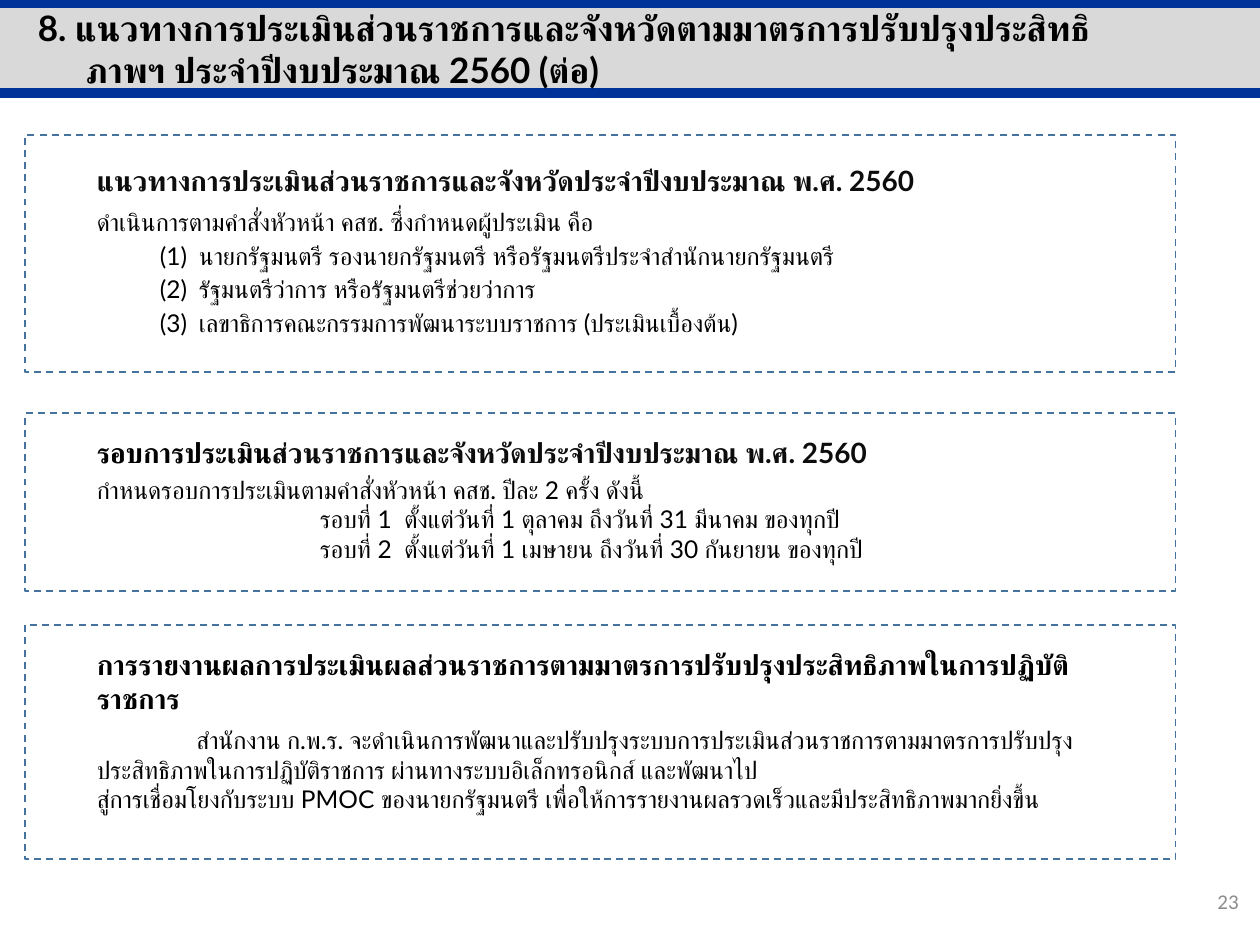
"""Build a slide on how government agencies are assessed in fiscal year 2560."""
from dataclasses import dataclass

from lxml import etree
from pptx import Presentation
from pptx import util as u
from pptx.dml.color import RGBColor
from pptx.enum import dml, shapes, text
from pptx.oxml.ns import qn

COLORS = {"band": "D9D9D9", "rule": "003399", "paper": "FFFFFF", "dash": "43739E",
          "black": "000000", "ink": "0D0D0D", "number": "8C8C8C"}
CARD_LEFT, CARD_WIDTH, TEXT_LEFT = 0.2, 9.13, 0.67


@dataclass(frozen=True)
class Line:
    text: str
    size: float = 14
    bold: bool = False
    color: str = "black"
    before: float = 0
    spacing: float = 1.0
    margin: float = 0
    indent: float = 0
    numbered: bool = False
    ink_tail: str = ""
    font: str = "Lato"
    align: text.PP_ALIGN = text.PP_ALIGN.LEFT


@dataclass(frozen=True)
class Card:
    top: float
    height: float
    text_top: float
    text_width: float
    text_height: float
    lines: tuple[Line, ...]


def heading(content: str, **options) -> Line:
    return Line(content, size=16, bold=True, before=6, **options)


def assessor(content: str) -> Line:
    return Line(content, spacing=1.15, margin=0.81, indent=-0.31, numbered=True)


TITLE = Line("8. แนวทางการประเมินส่วนราชการและจังหวัดตามมาตรการปรับปรุงประสิทธิภาพฯ "
             "ประจำปีงบประมาณ 2560 (ต่อ)", size=20, bold=True, margin=0.38, indent=-0.38)
PAGE_NUMBER = Line("23", size=12, color="number", font="Calibri", align=text.PP_ALIGN.RIGHT)
CARDS = (
    Card(4.96, 1.86, 5.09, 8.29, 2.22, (
        heading("การรายงานผลการประเมินผลส่วนราชการตามมาตรการปรับปรุงประสิทธิภาพในการปฏิบัติราชการ"),
        Line("สำนักงาน ก.พ.ร. จะดำเนินการพัฒนาและปรับปรุงระบบการประเมินส่วนราชการ"
             "ตามมาตรการปรับปรุงประสิทธิภาพในการปฏิบัติราชการ ผ่านทางระบบอิเล็กทรอนิกส์ และพัฒนาไป\n"
             "สู่การเชื่อมโยงกับระบบ PMOC ของนายกรัฐมนตรี "
             "เพื่อให้การรายงานผลรวดเร็วและมีประสิทธิภาพมากยิ่งขึ้น", before=6, indent=0.79))),
    Card(3.28, 1.41, 3.41, 7.5, 1.15, (
        heading("รอบการประเมิน", ink_tail="ส่วนราชการและจังหวัดประจำปีงบประมาณ พ.ศ. 2560"),
        Line("กำหนดรอบการประเมินตามคำสั่งหัวหน้า คสช. ปีละ 2 ครั้ง ดังนี้", before=3),
        Line("รอบที่ 1  ตั้งแต่วันที่ 1 ตุลาคม ถึงวันที่ 31 มีนาคม ของทุกปี", margin=1.77),
        Line("รอบที่ 2  ตั้งแต่วันที่ 1 เมษายน ถึงวันที่ 30 กันยายน ของทุกปี", margin=1.77))),
    Card(1.07, 1.88, 1.25, 8.58, 1.5, (
        heading("แนวทางการประเมินส่วนราชการและจังหวัดประจำปีงบประมาณ พ.ศ. 2560", color="ink"),
        Line("ดำเนินการตามคำสั่งหัวหน้า คสช. ซึ่งกำหนดผู้ประเมิน คือ", before=3, spacing=1.15),
        assessor("นายกรัฐมนตรี รองนายกรัฐมนตรี หรือรัฐมนตรีประจำสำนักนายกรัฐมนตรี"),
        assessor("รัฐมนตรีว่าการ หรือรัฐมนตรีช่วยว่าการ"),
        assessor("เลขาธิการคณะกรรมการพัฒนาระบบราชการ (ประเมินเบื้องต้น)"))),
)


def rgb(name: str) -> RGBColor:
    return RGBColor.from_string(COLORS[name])


def box(left: float, top: float, width: float, height: float) -> tuple[u.Length, ...]:
    return tuple(u.Inches(value) for value in (left, top, width, height))


def write_line(paragraph, line: Line, first: bool) -> None:
    paragraph.text = line.text
    paragraph.alignment = line.align
    paragraph.line_spacing = line.spacing
    paragraph.space_before = u.Pt(0 if first else line.before)
    properties = paragraph._p.get_or_add_pPr()
    properties.set("marL", str(u.Inches(line.margin)))
    properties.set("indent", str(u.Inches(line.indent)))
    if line.numbered:
        etree.SubElement(properties, qn("a:buFont"), typeface="Arial")
        etree.SubElement(properties, qn("a:buAutoNum"), type="arabicParenBoth")
    font = paragraph.font
    font.name, font.size, font.bold = line.font, u.Pt(line.size), line.bold
    font.color.rgb = rgb(line.color)
    etree.SubElement(font._rPr, qn("a:cs"), typeface=line.font)
    if line.ink_tail:
        run = paragraph.add_run()
        run.text = line.ink_tail
        run.font.color.rgb = rgb("ink")


def write_lines(frame, lines: tuple[Line, ...], anchor=text.MSO_ANCHOR.TOP) -> None:
    frame.word_wrap = True
    frame.auto_size = text.MSO_AUTO_SIZE.NONE
    frame.vertical_anchor = anchor
    for index, line in enumerate(lines):
        paragraph = frame.add_paragraph() if index else frame.paragraphs[0]
        write_line(paragraph, line, first=index == 0)


def add_rectangle(slide, area: tuple[u.Length, ...], fill: str):
    shape = slide.shapes.add_shape(shapes.MSO_SHAPE.RECTANGLE, *area)
    shape.shadow.inherit = False
    shape.fill.solid()
    shape.fill.fore_color.rgb = rgb(fill)
    shape.line.fill.background()
    return shape


def add_rule(slide, top: float) -> None:
    rule = slide.shapes.add_connector(shapes.MSO_CONNECTOR.STRAIGHT, *box(0, top, 10, top))
    rule.line.color.rgb = rgb("rule")
    rule.line.width = u.Pt(6)
    etree.SubElement(rule._element.spPr, qn("a:effectLst"))


def add_card(slide, card: Card) -> None:
    frame = add_rectangle(slide, box(CARD_LEFT, card.top, CARD_WIDTH, card.height), "paper")
    frame.line.color.rgb = rgb("dash")
    frame.line.width = u.Pt(1)
    frame.line.dash_style = dml.MSO_LINE.DASH
    content = slide.shapes.add_textbox(
        *box(TEXT_LEFT, card.text_top, card.text_width, card.text_height))
    write_lines(content.text_frame, card.lines)


def main() -> None:
    presentation = Presentation()
    presentation.slide_width, presentation.slide_height = u.Inches(10), u.Inches(7.5)
    slide = presentation.slides.add_slide(presentation.slide_layouts[5])

    add_rectangle(slide, box(0, 0.05, 10, 0.68), "band")
    for top in (0.74, 0.02):
        add_rule(slide, top)
    for card in CARDS:
        add_card(slide, card)

    title = slide.shapes.title
    title.left, title.top, title.width, title.height = box(0.2, 0, 9.05, 1.11)
    write_lines(title.text_frame, (TITLE,))
    slide.shapes._spTree.append(title._element)

    number = slide.shapes.add_textbox(*box(7.68, 6.95, 2.25, 0.4))
    write_lines(number.text_frame, (PAGE_NUMBER,), text.MSO_ANCHOR.MIDDLE)
    presentation.save("out.pptx")


if __name__ == "__main__":
    main()
